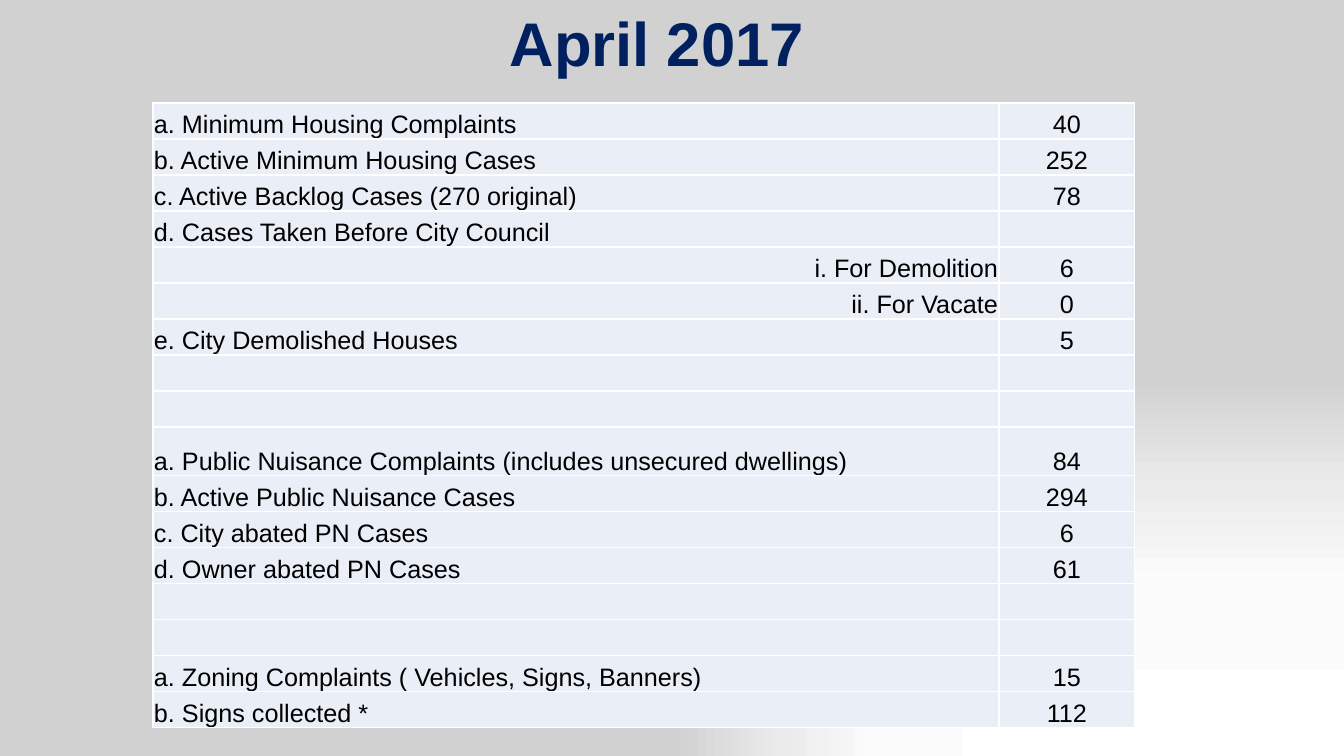
"""Builds the April 2017 code enforcement figures slide."""
import lxml.etree
import pptx
import pptx.dml.color
import pptx.enum.text
import pptx.oxml.ns
import pptx.util

LEFT = pptx.enum.text.PP_ALIGN.LEFT
CENTER = pptx.enum.text.PP_ALIGN.CENTER
RIGHT = pptx.enum.text.PP_ALIGN.RIGHT

HEADING = "April 2017"
FIGURES = [
    ("a. Minimum Housing Complaints", "40", LEFT),
    ("b. Active Minimum Housing Cases", "252", LEFT),
    ("c. Active Backlog Cases (270 original)", "78", LEFT),
    ("d. Cases Taken Before City Council", "", LEFT),
    ("i. For Demolition", "6", RIGHT),
    ("ii. For Vacate", "0", RIGHT),
    ("e. City Demolished Houses", "5", LEFT),
    ("", "", LEFT),
    ("", "", LEFT),
    ("a. Public Nuisance Complaints (includes unsecured dwellings)", "84", LEFT),
    ("b. Active Public Nuisance Cases", "294", LEFT),
    ("c. City abated PN Cases", "6", LEFT),
    ("d. Owner abated PN Cases", "61", LEFT),
    ("", "", LEFT),
    ("", "", LEFT),
    ("a. Zoning Complaints ( Vehicles, Signs, Banners)", "15", LEFT),
    ("b. Signs collected *", "112", LEFT),
]
TALL_ROW = 9
ROW_HEIGHT, TALL_HEIGHT = 36, 49
COLUMN_WIDTHS = (846, 136)
BACKDROP_STOPS = [(0, "FFFFFF"), (46, "FBFBFB"), (71, "EBEBEB"), (100, "D1D1D1")]

NAVY = pptx.dml.color.RGBColor(0x00, 0x20, 0x60)
BLACK = pptx.dml.color.RGBColor(0x00, 0x00, 0x00)
WHITE = pptx.dml.color.RGBColor(0xFF, 0xFF, 0xFF)
PALE_BLUE = pptx.dml.color.RGBColor(0xEA, 0xEF, 0xF7)
FONT = "Arial"


def px(length):
    """Turn px into EMU."""
    return pptx.util.Emu(round(length * 914400 / 100.8))


def add_element(parent, tag, **attributes):
    """Append a drawing element and return it."""
    element = lxml.etree.SubElement(parent, pptx.oxml.ns.qn(tag))
    for name, value in attributes.items():
        element.set(name, str(value))
    return element


def write(frame, text, align, size, color, bold=False):
    """Put one formatted paragraph into a text frame."""
    frame.text = text
    paragraph = frame.paragraphs[0]
    paragraph.alignment = align
    for run in paragraph.runs:
        run.font.name = FONT
        run.font.size = pptx.util.Pt(size)
        run.font.bold = bold
        run.font.color.rgb = color


def paint_backdrop(slide):
    """Fill the background with a gradient spreading from the lower right."""
    slide.background.fill.gradient()
    gradient = slide.element.find(".//" + pptx.oxml.ns.qn("a:gradFill"))
    for child in list(gradient):
        gradient.remove(child)
    stops = add_element(gradient, "a:gsLst")
    for position, color in BACKDROP_STOPS:
        stop = add_element(stops, "a:gs", pos=position * 1000)
        add_element(stop, "a:srgbClr", val=color)
    spread = add_element(gradient, "a:path", path="rect")
    add_element(spread, "a:fillToRect", l=100000, t=100000)


def style_cell(cell):
    """Give a cell its margins, white borders and fill."""
    cell.margin_left = cell.margin_top = cell.margin_right = px(1)
    cell.margin_bottom = 0
    cell.vertical_anchor = pptx.enum.text.MSO_ANCHOR.BOTTOM
    properties = cell._tc.get_or_add_tcPr()
    for side in ("a:lnL", "a:lnR", "a:lnT", "a:lnB"):
        border = add_element(properties, side, w=pptx.util.Pt(1))
        add_element(add_element(border, "a:solidFill"), "a:srgbClr", val=WHITE)
    cell.fill.solid()
    cell.fill.fore_color.rgb = PALE_BLUE


def add_figures(slide):
    """Add the table of figures."""
    heights = [TALL_HEIGHT if i == TALL_ROW else ROW_HEIGHT for i in range(len(FIGURES))]
    table = slide.shapes.add_table(
        len(FIGURES), len(COLUMN_WIDTHS),
        px(153), px(103), px(sum(COLUMN_WIDTHS)), px(sum(heights)),
    ).table
    table.first_row = table.horz_banding = False
    for column, width in zip(table.columns, COLUMN_WIDTHS):
        column.width = px(width)
    for row, height, (label, count, align) in zip(table.rows, heights, FIGURES):
        row.height = px(height)
        for cell, text, alignment in zip(row.cells, (label, count), (align, CENTER)):
            style_cell(cell)
            write(cell.text_frame, text, alignment, 18, BLACK)


def main():
    """Build and save the slide."""
    deck = pptx.Presentation()
    deck.slide_width, deck.slide_height = px(1344), px(756)
    slide = deck.slides.add_slide(deck.slide_layouts[6])
    paint_backdrop(slide)
    add_figures(slide)
    heading = slide.shapes.add_textbox(px(432), 0, px(450), px(85)).text_frame
    heading.word_wrap = True
    write(heading, HEADING, CENTER, 44, NAVY, bold=True)
    deck.save("out.pptx")


if __name__ == "__main__":
    main()
